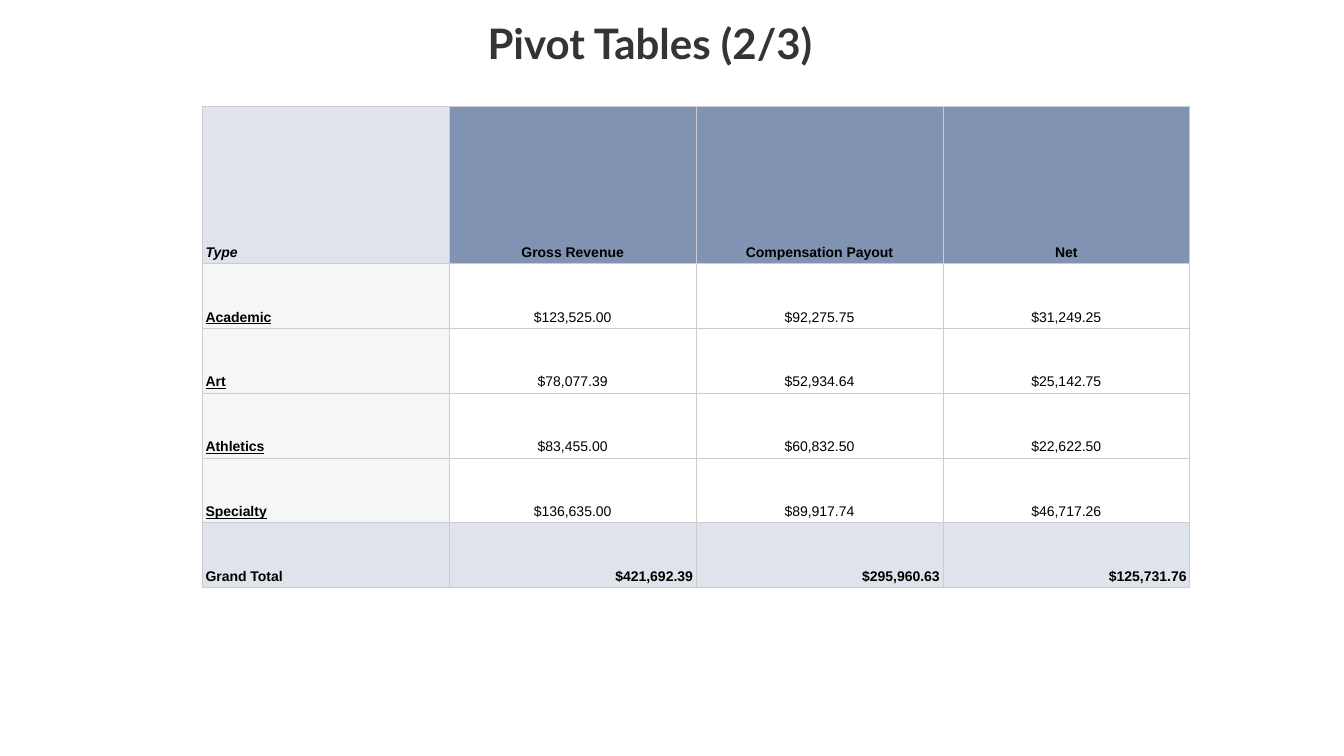
from lxml.etree import SubElement
from pptx import Presentation
from pptx.dml.color import RGBColor
from pptx.enum.text import MSO_ANCHOR, MSO_AUTO_SIZE, PP_ALIGN
from pptx.oxml.ns import qn
from pptx.util import Cm, Pt

COLORS = {
    "title": "353334",
    "text": "000000",
    "header": "8093B3",
    "total": "DFE4EC",
    "label": "F4F6F8",
    "value": "FFFFFF",
    "border": "CCCCCC",
}
HEADER = ["Type", "Gross Revenue", "Compensation Payout", "Net"]
REVENUE_ROWS = [
    ["Academic", "$123,525.00", "$92,275.75", "$31,249.25"],
    ["Art", "$78,077.39", "$52,934.64", "$25,142.75"],
    ["Athletics", "$83,455.00", "$60,832.50", "$22,622.50"],
    ["Specialty", "$136,635.00", "$89,917.74", "$46,717.26"],
]
TOTAL = ["Grand Total", "$421,692.39", "$295,960.63", "$125,731.76"]


def rgb(name):
    return RGBColor.from_string(COLORS[name])


def set_borders(cell):
    """Draw a thin line on all four sides; called before the cell is filled."""
    properties = cell._tc.get_or_add_tcPr()
    for side in ("a:lnL", "a:lnR", "a:lnT", "a:lnB"):
        line = SubElement(properties, qn(side), w=str(Pt(0.42)))
        fill = SubElement(line, qn("a:solidFill"))
        SubElement(fill, qn("a:srgbClr"), val=COLORS["border"])


def format_cell(cell, text, fill, align, bold=False, italic=False, underline=False):
    set_borders(cell)
    cell.fill.solid()
    cell.fill.fore_color.rgb = rgb(fill)
    cell.vertical_anchor = MSO_ANCHOR.BOTTOM
    cell.margin_left = cell.margin_right = Cm(0.08)
    cell.margin_top = cell.margin_bottom = Cm(0.08)
    cell.text = text
    paragraph = cell.text_frame.paragraphs[0]
    paragraph.alignment = align
    paragraph.line_spacing = 1.15
    font = paragraph.font
    font.name, font.size = "Arial", Pt(10)
    font.bold, font.italic, font.underline = bold, italic, underline
    font.color.rgb = rgb("text")


def add_title(slide, left, top, width, height):
    title = slide.shapes.title
    title.left, title.top, title.width, title.height = left, top, width, height
    frame = title.text_frame
    frame.text = "Pivot Tables (2/3)"
    frame.auto_size = MSO_AUTO_SIZE.NONE
    frame.vertical_anchor = MSO_ANCHOR.MIDDLE
    paragraph = frame.paragraphs[0]
    paragraph.alignment = PP_ALIGN.CENTER
    paragraph.font.name, paragraph.font.size = "Lato", Pt(30)
    paragraph.font.bold = True
    paragraph.font.color.rgb = rgb("title")


def add_pivot_table(slide, left, top, width, height, header_height):
    rows = [HEADER, *REVENUE_ROWS, TOTAL]
    last = len(rows) - 1
    table = slide.shapes.add_table(
        len(rows), len(HEADER), left, top, width, height
    ).table
    table.first_row = table.horz_banding = False
    for column in table.columns:
        column.width = width // len(HEADER)
    for index, values in enumerate(rows):
        is_header, is_total = index == 0, index == last
        table.rows[index].height = (
            header_height if is_header else (height - header_height) // last
        )
        label_fill = "total" if is_header or is_total else "label"
        value_fill = "header" if is_header else "total" if is_total else "value"
        value_align = PP_ALIGN.RIGHT if is_total else PP_ALIGN.CENTER
        format_cell(
            table.cell(index, 0), values[0], label_fill, PP_ALIGN.LEFT, bold=True,
            italic=is_header, underline=not (is_header or is_total),
        )
        for column, value in enumerate(values[1:], start=1):
            format_cell(
                table.cell(index, column), value, value_fill, value_align,
                bold=is_header or is_total,
            )


def main():
    presentation = Presentation()
    presentation.slide_width, presentation.slide_height = Cm(33.87), Cm(19.05)
    slide = presentation.slides.add_slide(presentation.slide_layouts[5])
    add_title(slide, Cm(4.11), Cm(0.15), Cm(24.54), Cm(1.83))
    add_pivot_table(slide, Cm(5.1), Cm(2.68), Cm(24.88), Cm(12.12), Cm(3.96))
    presentation.save("out.pptx")


if __name__ == "__main__":
    main()
